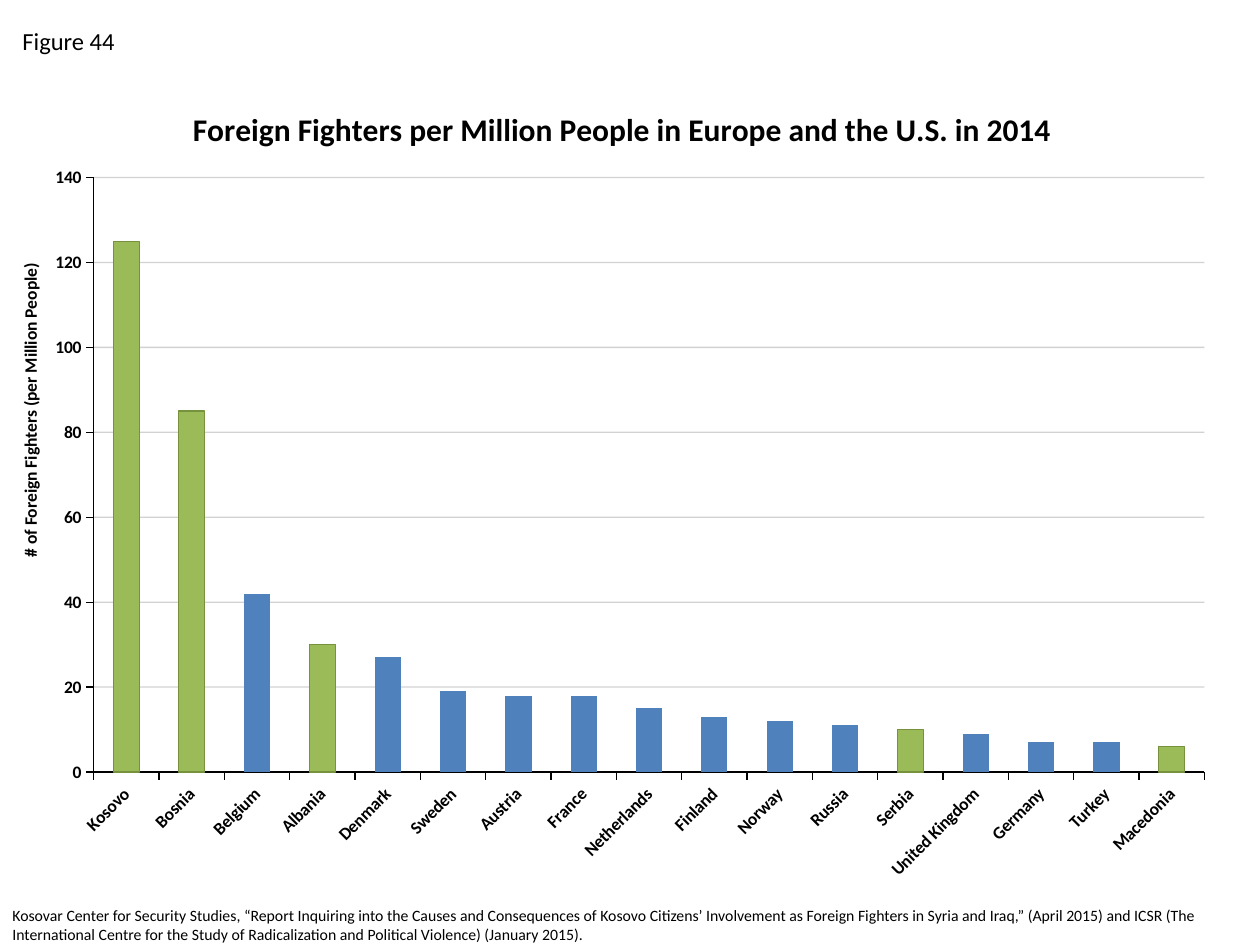
"""Build a slide with a column chart of foreign fighters per million people."""
from dataclasses import dataclass

from pptx import Presentation
from pptx.chart.chart import Chart
from pptx.chart.data import CategoryChartData
from pptx.dml.color import RGBColor
from pptx.enum.chart import XL_CHART_TYPE, XL_TICK_MARK
from pptx.enum.text import MSO_AUTO_SIZE, PP_ALIGN
from pptx.oxml import parse_xml
from pptx.oxml.ns import nsdecls, qn
from pptx.util import Inches, Pt

COLUMN = XL_CHART_TYPE.COLUMN_CLUSTERED
TICK_OUTSIDE, TICK_NONE = XL_TICK_MARK.OUTSIDE, XL_TICK_MARK.NONE
FIT_SHAPE = MSO_AUTO_SIZE.SHAPE_TO_FIT_TEXT
LEFT, CENTER = PP_ALIGN.LEFT, PP_ALIGN.CENTER

SLIDE_WIDTH, SLIDE_HEIGHT = Inches(10), Inches(7.5)
FONT = "Calibri"
COLORS = {"text": "000000", "grid": "808080", "country": "4F81BD",
          "balkan": "9BBB59", "balkan_edge": "76923C"}
TITLE = "Foreign Fighters per Million People in Europe and the U.S. in 2014"
SOURCE = (
    "Kosovar Center for Security Studies, “Report Inquiring into the Causes and "
    "Consequences of Kosovo Citizens’ Involvement as Foreign Fighters in Syria and "
    "Iraq,” (April 2015) and ICSR (The International Centre for the Study of "
    "Radicalization and Political Violence) (January 2015)."
)
FIGHTERS = {
    "Kosovo": 125, "Bosnia": 85, "Belgium": 42, "Albania": 30, "Denmark": 27,
    "Sweden": 19, "Austria": 18, "France": 18, "Netherlands": 15, "Finland": 13,
    "Norway": 12, "Russia": 11, "Serbia": 10, "United Kingdom": 9, "Germany": 7,
    "Turkey": 7, "Macedonia": 6,
}
BALKANS = {"Kosovo", "Bosnia", "Albania", "Serbia", "Macedonia"}


@dataclass(frozen=True)
class Box:
    """Place on the slide, in inches."""
    left: float
    top: float
    width: float
    height: float

    def scaled(self) -> tuple:
        """Return the lengths in slide units."""
        shares = (self.left / 10, self.top / 7.5, self.width / 10, self.height / 7.5)
        sides = (SLIDE_WIDTH, SLIDE_HEIGHT) * 2
        return tuple(round(share * side) for share, side in zip(shares, sides))


@dataclass(frozen=True)
class Label:
    """Text box with one paragraph."""
    text: str
    box: Box
    size: int
    bold: bool = False
    align: PP_ALIGN = LEFT
    rotation: int = 0


CHART_BOX = Box(0.25, 0.61, 9.5, 6.5)
LABELS = (
    Label("Figure 44", Box(0.08, 0.16, 1.33, 0.34), 14),
    Label(SOURCE, Box(0, 7.14, 10, 0.4), 9),
    Label("# of Foreign Fighters (per Million People)", Box(-1.35, 3.12, 3.18, 0.27),
          10, True, CENTER, 270),
)


def apply_format(target, values: dict) -> None:
    """Set each named attribute of the target."""
    for name, value in values.items():
        setattr(target, name, value)


def style_font(font, size: int, bold: bool) -> None:
    """Give a font the slide's typeface and colour."""
    apply_format(font, {"name": FONT, "size": Pt(size), "bold": bold})
    font.color.rgb = RGBColor.from_string(COLORS["text"])


def style_line(line, color: str) -> None:
    """Draw a thin solid line."""
    line.color.rgb = RGBColor.from_string(COLORS[color])
    line.width = Pt(0.75)


def fill_solid(fill, color: str) -> None:
    """Fill with one named colour."""
    fill.solid()
    fill.fore_color.rgb = RGBColor.from_string(COLORS[color])


def add_label(slide, label: Label) -> None:
    """Add a text box."""
    shape = slide.shapes.add_textbox(*label.box.scaled())
    shape.rotation = label.rotation
    apply_format(shape.text_frame, {"word_wrap": True, "auto_size": FIT_SHAPE})
    paragraph = shape.text_frame.paragraphs[0]
    paragraph.alignment = label.align
    run = paragraph.add_run()
    run.text = label.text
    style_font(run.font, label.size, label.bold)


def set_layout(parent, position: int, settings: dict) -> None:
    """Give a chart part a manual layout."""
    for layout in parent.findall(qn("c:layout")):
        parent.remove(layout)
    items = "".join(f'<c:{name} val="{value}"/>' for name, value in settings.items())
    parent.insert(position, parse_xml(
        f'<c:layout {nsdecls("c")}><c:manualLayout>{items}</c:manualLayout></c:layout>'))


def style_axes(chart: Chart) -> None:
    """Format both axes and the gridlines."""
    for axis in (chart.category_axis, chart.value_axis):
        apply_format(axis, {"major_tick_mark": TICK_OUTSIDE, "minor_tick_mark": TICK_NONE})
        style_line(axis.format.line, "text")
        style_font(axis.tick_labels.font, 10, True)
    chart.category_axis.has_major_gridlines = False
    body = chart.category_axis._element.find(qn("c:txPr")).find(qn("a:bodyPr"))
    body.set("rot", "-2700000")
    body.set("vert", "horz")
    apply_format(chart.value_axis, {"minimum_scale": 0, "maximum_scale": 140,
                                    "major_unit": 20, "has_major_gridlines": True})
    gridlines = chart.value_axis.major_gridlines
    style_line(gridlines.format.line, "grid")
    color = next(gridlines._xAx.find(qn("c:majorGridlines")).iter(qn("a:srgbClr")))
    color.append(parse_xml(f'<a:alpha {nsdecls("a")} val="35000"/>'))


def add_fighters_chart(slide) -> None:
    """Add the column chart with the Balkan countries highlighted."""
    data = CategoryChartData()
    data.categories = FIGHTERS
    data.add_series("Series 1", FIGHTERS.values())
    chart = slide.shapes.add_chart(COLUMN, *CHART_BOX.scaled(), data).chart
    apply_format(chart, {"has_legend": False, "has_title": True})
    style_font(chart.font, 10, False)
    run = chart.chart_title.text_frame.paragraphs[0].add_run()
    run.text = TITLE
    style_font(run.font, 18, True)
    set_layout(chart.chart_title._element, 1,
               {"xMode": "edge", "yMode": "edge", "x": 0.13, "y": 0.03})
    set_layout(chart._chartSpace.chart.plotArea, 0,
               {"layoutTarget": "inner", "xMode": "edge", "yMode": "edge",
                "x": 0.052, "y": 0.123, "w": 0.928, "h": 0.726})
    style_axes(chart)
    plot = chart.plots[0]
    apply_format(plot, {"gap_width": 150, "vary_by_categories": False})
    series = plot.series[0]
    fill_solid(series.format.fill, "country")
    for index, country in enumerate(FIGHTERS):
        if country in BALKANS:
            point = series.points[index]
            fill_solid(point.format.fill, "balkan")
            style_line(point.format.line, "balkan_edge")


def main() -> None:
    """Build and save the slide."""
    presentation = Presentation()
    apply_format(presentation, {"slide_width": SLIDE_WIDTH, "slide_height": SLIDE_HEIGHT})
    slide = presentation.slides.add_slide(presentation.slide_layouts[6])
    *captions, axis_label = LABELS
    for label in captions:
        add_label(slide, label)
    add_fighters_chart(slide)
    add_label(slide, axis_label)
    presentation.save("out.pptx")


if __name__ == "__main__":
    main()
